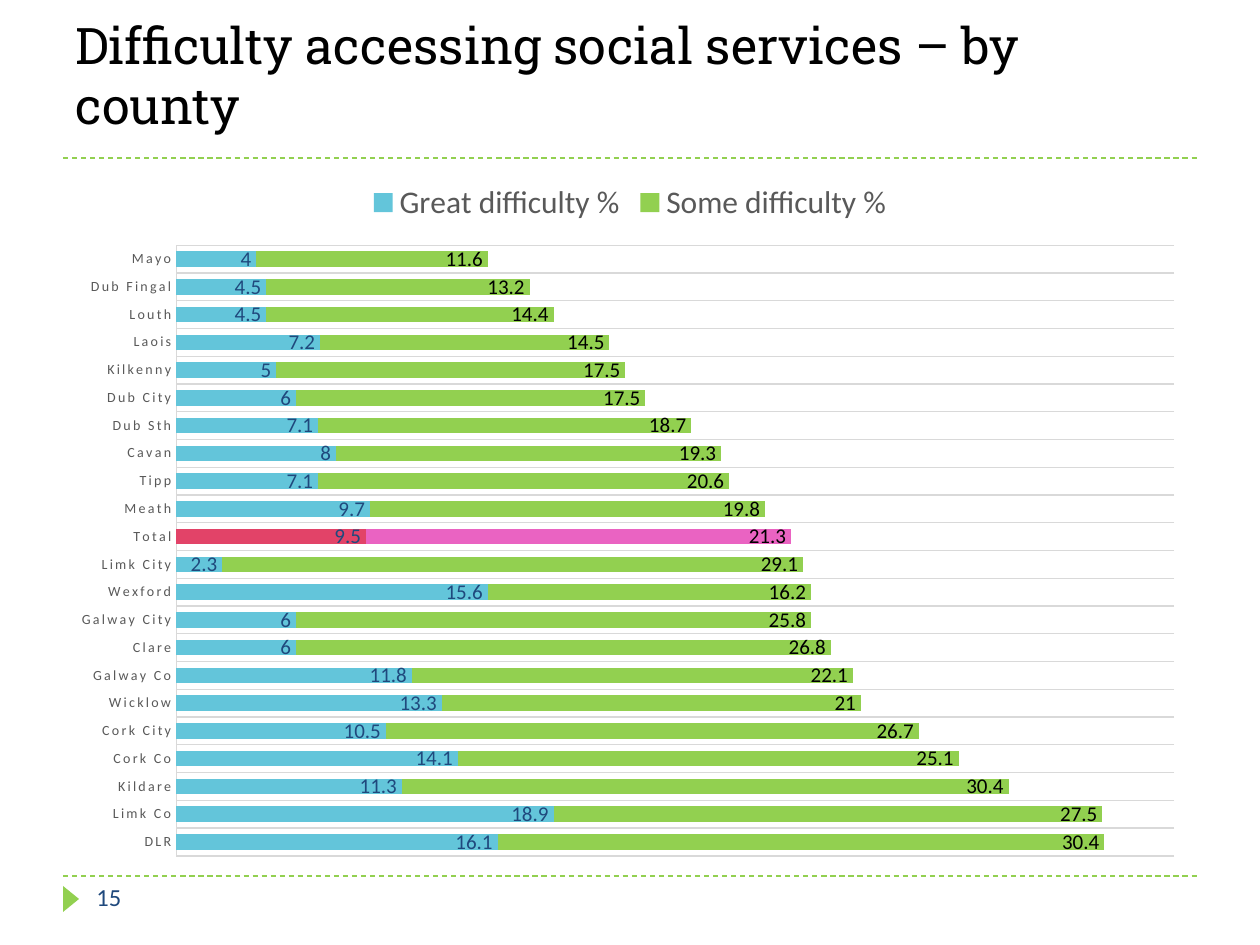
"""Build the slide on difficulty accessing social services by county."""
from lxml import etree
from pptx import Presentation
from pptx.chart.data import CategoryChartData
from pptx.dml.color import RGBColor
from pptx.enum.chart import XL_CHART_TYPE, XL_LABEL_POSITION, XL_LEGEND_POSITION, XL_TICK_MARK
from pptx.enum.dml import MSO_LINE
from pptx.enum.shapes import MSO_CONNECTOR, MSO_SHAPE
from pptx.enum.text import MSO_ANCHOR
from pptx.oxml import parse_xml
from pptx.oxml.ns import nsdecls, qn
from pptx.util import Pt

STACKED = XL_CHART_TYPE.BAR_STACKED
INSIDE_END = XL_LABEL_POSITION.INSIDE_END
LEGEND_TOP = XL_LEGEND_POSITION.TOP
NO_TICK = XL_TICK_MARK.NONE
DASH = MSO_LINE.DASH
STRAIGHT = MSO_CONNECTOR.STRAIGHT
TRIANGLE = MSO_SHAPE.ISOSCELES_TRIANGLE
TOP, BOTTOM = MSO_ANCHOR.TOP, MSO_ANCHOR.BOTTOM

BLACK = RGBColor(0x00, 0x00, 0x00)
NAVY = RGBColor(0x1F, 0x49, 0x7D)
GREEN = RGBColor(0x92, 0xD0, 0x50)
BLUE = RGBColor(0x63, 0xC5, 0xDA)
RED = RGBColor(0xE2, 0x43, 0x68)
PINK = RGBColor(0xEA, 0x63, 0xC2)
GREY = RGBColor(0x59, 0x59, 0x59)
PALE_GREY = RGBColor(0xD9, 0xD9, 0xD9)

COUNTIES = [
    ("DLR", 16.1, 30.4), ("Limk Co", 18.9, 27.5), ("Kildare", 11.3, 30.4),
    ("Cork Co", 14.1, 25.1), ("Cork City", 10.5, 26.7), ("Wicklow", 13.3, 21),
    ("Galway Co", 11.8, 22.1), ("Clare", 6, 26.8), ("Galway City", 6, 25.8),
    ("Wexford", 15.6, 16.2), ("Limk City", 2.3, 29.1), ("Total", 9.5, 21.3),
    ("Meath", 9.7, 19.8), ("Tipp", 7.1, 20.6), ("Cavan", 8, 19.3),
    ("Dub Sth", 7.1, 18.7), ("Dub City", 6, 17.5), ("Kilkenny", 5, 17.5),
    ("Laois", 7.2, 14.5), ("Louth", 4.5, 14.4), ("Dub Fingal", 4.5, 13.2),
    ("Mayo", 4, 11.6),
]
SERIES_STYLES = [
    ("Great difficulty %", BLUE, RED, NAVY),
    ("Some difficulty %", GREEN, PINK, BLACK),
]


def emu(px):
    """Turn px into EMU at 126 px to the inch."""
    return round(px * 914400 / 126)


class SlideBuilder:
    """Holds the fonts and the current slide."""

    heading_font = "Roboto Slab"
    body_font = "Calibri"

    def __init__(self, slide):
        self.shapes = slide.shapes

    def set_font(self, font, size, color, name=body_font):
        font.name, font.size, font.color.rgb = name, Pt(size), color

    def text(self, box, content, size, color, name=body_font, anchor=TOP):
        frame = self.shapes.add_textbox(*map(emu, box)).text_frame
        frame.word_wrap = True
        frame.vertical_anchor = anchor
        run = frame.paragraphs[0].add_run()
        run.text = content
        self.set_font(run.font, size, color, name)

    def dashed_rule(self, left, right, y):
        rule = self.shapes.add_connector(STRAIGHT, *map(emu, (left, y, right, y)))
        rule.line.color.rgb = GREEN
        rule.line.width = Pt(0.75)
        rule.line.dash_style = DASH
        etree.SubElement(rule.element.spPr, qn("a:effectLst"))

    def marker(self, box):
        marker = self.shapes.add_shape(TRIANGLE, *map(emu, box))
        marker.rotation = 90
        marker.shadow.inherit = False
        marker.fill.solid()
        marker.fill.fore_color.rgb = GREEN
        marker.line.fill.background()

    def stacked_bars(self, box, rows, styles, highlight):
        names, *columns = zip(*rows)
        data = CategoryChartData()
        data.categories = names
        for style, values in zip(styles, columns):
            data.add_series(style[0], values)
        chart = self.shapes.add_chart(STACKED, *map(emu, box), data).chart
        chart.has_title = False
        self.set_font(chart.font, 10, BLACK)
        chart.has_legend = True
        chart.legend.position = LEGEND_TOP
        chart.legend.include_in_layout = False
        self.set_font(chart.legend.font, 18, GREY)
        self.style_axes(chart)
        self.place_plot(chart, x=0.1, y=0.11, w=0.88, h=0.87)

        plot = chart.plots[0]
        plot.gap_width, plot.overlap = 79, 100
        plot.vary_by_categories = False
        for series, (_, color, accent, label_color) in zip(plot.series, styles):
            total = series.points[names.index(highlight)]
            for part, part_color in ((series, color), (total, accent)):
                part.format.fill.solid()
                part.format.fill.fore_color.rgb = part_color
            series.invert_if_negative = False
            labels = series.data_labels
            labels.show_value = True
            labels.position = INSIDE_END
            self.set_font(labels.font, 12, label_color)

    def style_axes(self, chart):
        values = chart.value_axis
        values.minimum_scale, values.maximum_scale = 0, 50
        values.has_major_gridlines = False
        values.visible = False
        counties = chart.category_axis
        counties.major_tick_mark = counties.minor_tick_mark = NO_TICK
        counties.has_major_gridlines = True
        for line in (counties.format.line, counties.major_gridlines.format.line):
            line.color.rgb = PALE_GREY
            line.width = Pt(0.75)
        self.set_font(counties.tick_labels.font, 8, GREY)
        for props in counties._element.iter(qn("a:defRPr")):
            props.set("spc", "120")

    def place_plot(self, chart, **fractions):
        area = chart._chartSpace.chart.plotArea
        for layout in area.findall(qn("c:layout")):
            area.remove(layout)
        modes = "".join(f'<c:{side}Mode val="edge"/>' for side in "xy")
        sizes = "".join(f'<c:{key} val="{part}"/>' for key, part in fractions.items())
        area.insert(0, parse_xml(
            f'<c:layout {nsdecls("c")}><c:manualLayout><c:layoutTarget val="inner"/>'
            f"{modes}{sizes}</c:manualLayout></c:layout>"))


def main():
    deck = Presentation()
    deck.slide_width, deck.slide_height = emu(1260), emu(945)
    builder = SlideBuilder(deck.slides.add_slide(deck.slide_layouts[6]))
    for y in (876, 158):
        builder.dashed_rule(63, 1197, y)
    builder.marker((58, 891, 26, 16))
    builder.text((63, 21, 1134, 120), "Difficulty accessing social services – by county",
                 28.8, BLACK, builder.heading_font, BOTTOM)
    builder.text((84, 876, 273, 50), "15", 14, NAVY)
    builder.stacked_bars((63, 168, 1134, 702), COUNTIES, SERIES_STYLES, "Total")
    deck.save("out.pptx")


if __name__ == "__main__":
    main()
